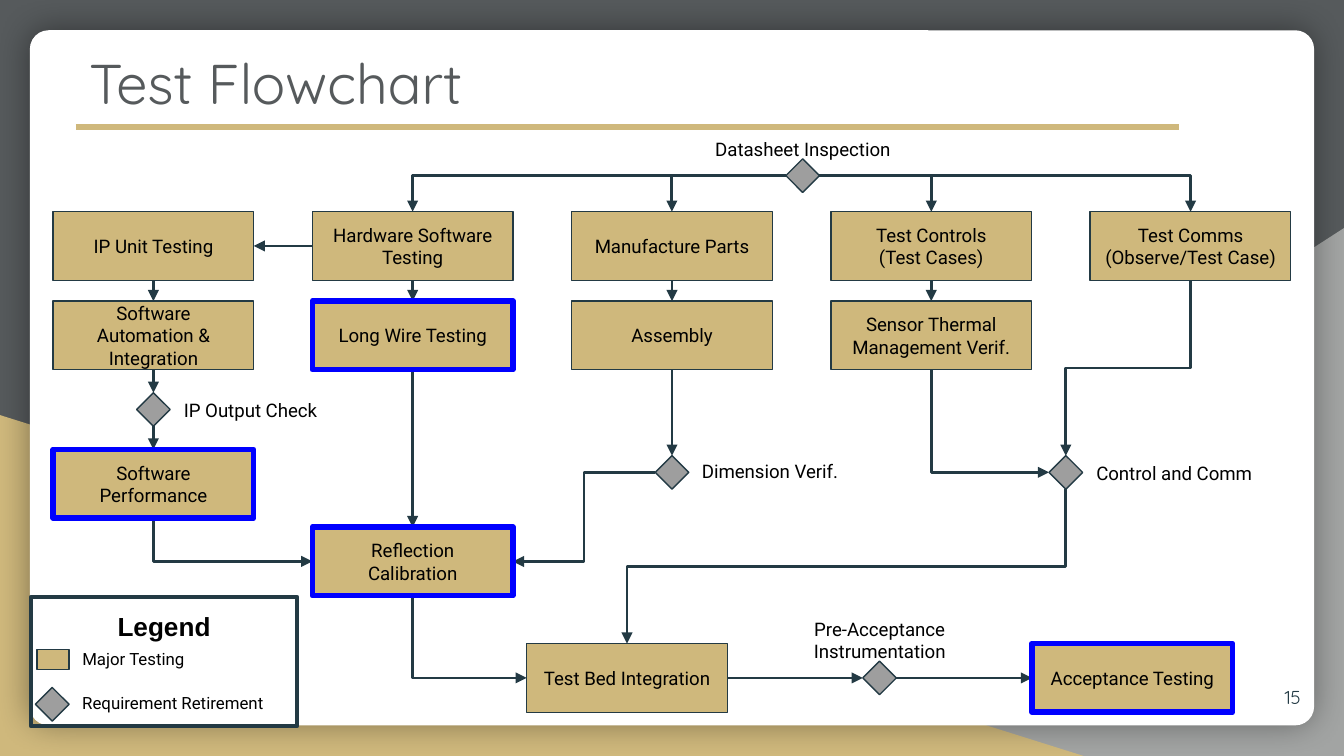
"""Build the Test Flowchart slide."""
from typing import NamedTuple

from lxml import etree
from pptx import Presentation
from pptx.dml.color import RGBColor
from pptx.enum import shapes as es, text as et
from pptx.oxml.ns import qn
from pptx.util import Pt

SLATE = RGBColor(0x56, 0x5A, 0x5C)
SILVER = RGBColor(0xA2, 0xA4, 0xA3)
GOLD = RGBColor(0xCF, 0xB8, 0x7C)
WHITE = RGBColor(0xFF, 0xFF, 0xFF)
BLACK = RGBColor(0, 0, 0)
NAVY = RGBColor(0x23, 0x3A, 0x44)
GRAY = RGBColor(0x9E, 0x9E, 0x9E)
BLUE = RGBColor(0, 0, 0xFF)

KIND = es.MSO_SHAPE
LEFT, MID, RIGHT = et.PP_ALIGN.LEFT, et.PP_ALIGN.CENTER, et.PP_ALIGN.RIGHT
TOP, CENTER = et.MSO_ANCHOR.TOP, et.MSO_ANCHOR.MIDDLE
N, W, S, E = range(4)
BOX = (107.5, 36.8)
GEM = (18, 18)
COLS = [82.2 + 138.9 * i for i in range(5)]
ROWS = [131.8, 179.7, 259.2, 300.8, 363.2]


class Step(NamedTuple):
    key: str
    x: float
    y: float
    text: str = ""
    key_test: bool = False


class Label(NamedTuple):
    text: str
    x: float
    y: float
    w: float
    h: float = 23
    align: et.PP_ALIGN = LEFT
    size: float = 10
    font: str = "Roboto"
    color: RGBColor = BLACK


class Link(NamedTuple):
    start: str
    out: int
    end: str
    into: int


STEPS = [
    Step("ip", COLS[0], ROWS[0], "IP Unit Testing"),
    Step("hard", COLS[1], ROWS[0], "Hardware Software Testing"),
    Step("parts", COLS[2], ROWS[0], "Manufacture Parts"),
    Step("control", COLS[3], ROWS[0], "Test Controls\v(Test Cases)"),
    Step("comms", COLS[4], ROWS[0], "Test Comms (Observe/Test Case)"),
    Step("soft", COLS[0], ROWS[1], "Software Automation & Integration"),
    Step("wire", COLS[1], ROWS[1], "Long Wire Testing", True),
    Step("build", COLS[2], ROWS[1], "Assembly"),
    Step("thermal", COLS[3], ROWS[1], "Sensor Thermal Management Verif."),
    Step("perform", COLS[0], ROWS[2], "Software Performance", True),
    Step("reflect", COLS[1], ROWS[3], "Reflection Calibration", True),
    Step("bed", 335.9, ROWS[4], "Test Bed Integration"),
    Step("accept", 606.6, ROWS[4], "Acceptance Testing", True),
]
GATES = [
    Step("sheet", 430, 94.1),
    Step("output", COLS[0], 219.4),
    Step("size", COLS[2], 253.1),
    Step("joint", 571, 253.1),
    Step("pre", 471.2, ROWS[4]),
]
LABELS = [
    Label("Datasheet Inspection", 371.4, 68.5, 117.4, align=MID),
    Label("IP Output Check", 91.4, 208.2, 110),
    Label("Dimension Verif.", 368.9, 240.9, 110),
    Label("Control and Comm", 580.2, 242, 110),
    Label("Pre-Acceptance Instrumentation", 416.2, 331.4, 110, align=MID),
    Label("15", 661, 358, 43, 31, RIGHT, 10, "Quicksand", NAVY),
]
KEYS = [
    Label("Major Testing", 37, 347.2, 107, 11, size=9),
    Label("Requirement Retirement", 37, 371, 117, 11, size=9),
]
LINKS = [
    *(Link("sheet", E, key, N) for key in ("control", "comms")),
    *(Link("sheet", W, key, N) for key in ("hard", "parts")),
    Link("hard", W, "ip", E),
    Link("ip", S, "soft", N),
    Link("hard", S, "wire", N),
    Link("parts", S, "build", N),
    Link("control", S, "thermal", N),
    Link("soft", S, "output", N),
    Link("output", S, "perform", N),
    Link("perform", S, "reflect", W),
    Link("wire", S, "reflect", N),
    Link("build", S, "size", N),
    Link("size", W, "reflect", E),
    Link("thermal", S, "joint", W),
    Link("comms", S, "joint", N),
    Link("joint", S, "bed", N),
    Link("reflect", S, "bed", W),
    Link("bed", E, "pre", W),
    Link("pre", E, "accept", W),
]


def write(shape, text: str, *, size: float = 10, font: str = "Roboto", color: RGBColor = BLACK,
          bold: bool = False, align=MID, anchor=CENTER) -> None:
    frame = shape.text_frame
    frame.text = text
    frame.word_wrap = True
    frame.auto_size = et.MSO_AUTO_SIZE.NONE
    frame.vertical_anchor = anchor
    frame.margin_left = frame.margin_right = frame.margin_top = frame.margin_bottom = Pt(7.2)
    para = frame.paragraphs[0]
    para.alignment = align
    for run in para.runs:
        run.font.size, run.font.name, run.font.bold = Pt(size), font, bold
        run.font.color.rgb = color


def draw(slide, kind, x: float, y: float, w: float, h: float, fill=None, line=None, width: float = 0.75):
    shape = slide.shapes.add_shape(kind, Pt(x), Pt(y), Pt(w), Pt(h))
    shape.shadow.inherit = False
    if fill is None:
        shape.fill.background()
    else:
        shape.fill.solid()
        shape.fill.fore_color.rgb = fill
    if line is None:
        shape.line.fill.background()
    else:
        shape.line.color.rgb = line
        shape.line.width = Pt(width)
    return shape


def place(slide, kind, step: Step, size: tuple[float, float], fill=None, line=NAVY, width: float = 0.75):
    w, h = size
    return draw(slide, kind, step.x - w / 2, step.y - h / 2, w, h, fill, line, width)


def label(slide, item: Label) -> None:
    box = slide.shapes.add_textbox(Pt(item.x), Pt(item.y), Pt(item.w), Pt(item.h))
    write(box, item.text, size=item.size, font=item.font, color=item.color, align=item.align)


def stroke(slide, kind, color: RGBColor, width: float, ends=(0, 0, 0, 0)):
    line = slide.shapes.add_connector(kind, *map(Pt, ends))
    line.line.color.rgb = color
    line.line.width = Pt(width)
    etree.SubElement(line.element.spPr, qn("a:effectLst"))
    return line


def join(slide, nodes: dict, link: Link) -> None:
    line = stroke(slide, es.MSO_CONNECTOR.ELBOW, NAVY, 1.5)
    line.begin_connect(nodes[link.start], link.out)
    line.end_connect(nodes[link.end], link.into)
    etree.SubElement(line.element.spPr.find(qn("a:ln")), qn("a:tailEnd"), type="triangle")
    dx, dy = line.end_x - line.begin_x, line.end_y - line.begin_y
    geom = line.element.spPr.find(qn("a:prstGeom"))
    if min(abs(dx), abs(dy)) < Pt(0.2):
        geom.set("prst", "straightConnector1")
        return
    if link.out % 2 != link.into % 2:
        geom.set("prst", "bentConnector2")
    if link.out == S:
        x, y = line.begin_x + dx // 2, line.begin_y + dy // 2
        line.width, line.height = abs(dy), abs(dx)
        line.left, line.top = x - abs(dy) // 2, y - abs(dx) // 2
        frame = line.element.spPr.xfrm
        frame.set("flipH", "1" if dx > 0 else "0")
        frame.set("rot", str((270 if dx > 0 else 90) * 60000))


def backdrop(slide) -> None:
    slide.background.fill.solid()
    slide.background.fill.fore_color.rgb = SLATE
    wedge = draw(slide, KIND.RIGHT_TRIANGLE, 282, 122.2, 438, 282.8, SILVER)
    wedge.element.spPr.xfrm.set("flipH", "1")
    draw(slide, KIND.RIGHT_TRIANGLE, 0, 222.4, 580.5, 182.6, GOLD)
    card = draw(slide, KIND.ROUNDED_RECTANGLE, 16, 16.2, 688, 372.4, WHITE)
    card.adjustments[0] = 0.027
    glow = etree.SubElement(card.element.spPr.find(qn("a:effectLst")), qn("a:outerShdw"),
                            blurRad=str(Pt(18)), dist="0", dir="0", algn="ctr", rotWithShape="0")
    tint = etree.SubElement(glow, qn("a:srgbClr"), val="000000")
    etree.SubElement(tint, qn("a:alpha"), val="40000")
    stroke(slide, es.MSO_CONNECTOR.STRAIGHT, GOLD, 3, (40.6, 68, 631.6, 68))


def legend(slide) -> None:
    panel = draw(slide, KIND.RECTANGLE, 16.6, 319.8, 142.6, 69.2, line=NAVY, width=2.25)
    write(panel, "Legend", size=14, font="Arial", bold=True, anchor=TOP)
    draw(slide, KIND.FLOWCHART_DECISION, 19, 368.3, *GEM, GRAY, NAVY)
    draw(slide, KIND.RECTANGLE, 19.8, 347.9, 17.2, 10.8, GOLD, NAVY)
    for item in KEYS:
        label(slide, item)


def main() -> None:
    deck = Presentation()
    deck.slide_width, deck.slide_height = Pt(720), Pt(405)
    slide = deck.slides.add_slide(deck.slide_layouts[5])
    backdrop(slide)
    title = slide.shapes.title
    title.left, title.top, title.width, title.height = map(Pt, (40.6, 18.7, 591, 49.5))
    write(title, "Test Flowchart", size=30, font="Quicksand", color=SLATE, align=LEFT, anchor=TOP)
    title.element.getparent().append(title.element)
    nodes = {}
    for step in STEPS:
        nodes[step.key] = place(slide, KIND.RECTANGLE, step, BOX, GOLD)
        write(nodes[step.key], step.text)
    for gate in GATES:
        nodes[gate.key] = place(slide, KIND.FLOWCHART_DECISION, gate, GEM, GRAY)
    for item in LABELS:
        label(slide, item)
    for link in LINKS:
        join(slide, nodes, link)
    for step in STEPS:
        if step.key_test:
            place(slide, KIND.RECTANGLE, step, BOX, line=BLUE, width=3)
    legend(slide)
    deck.save("out.pptx")


if __name__ == "__main__":
    main()
